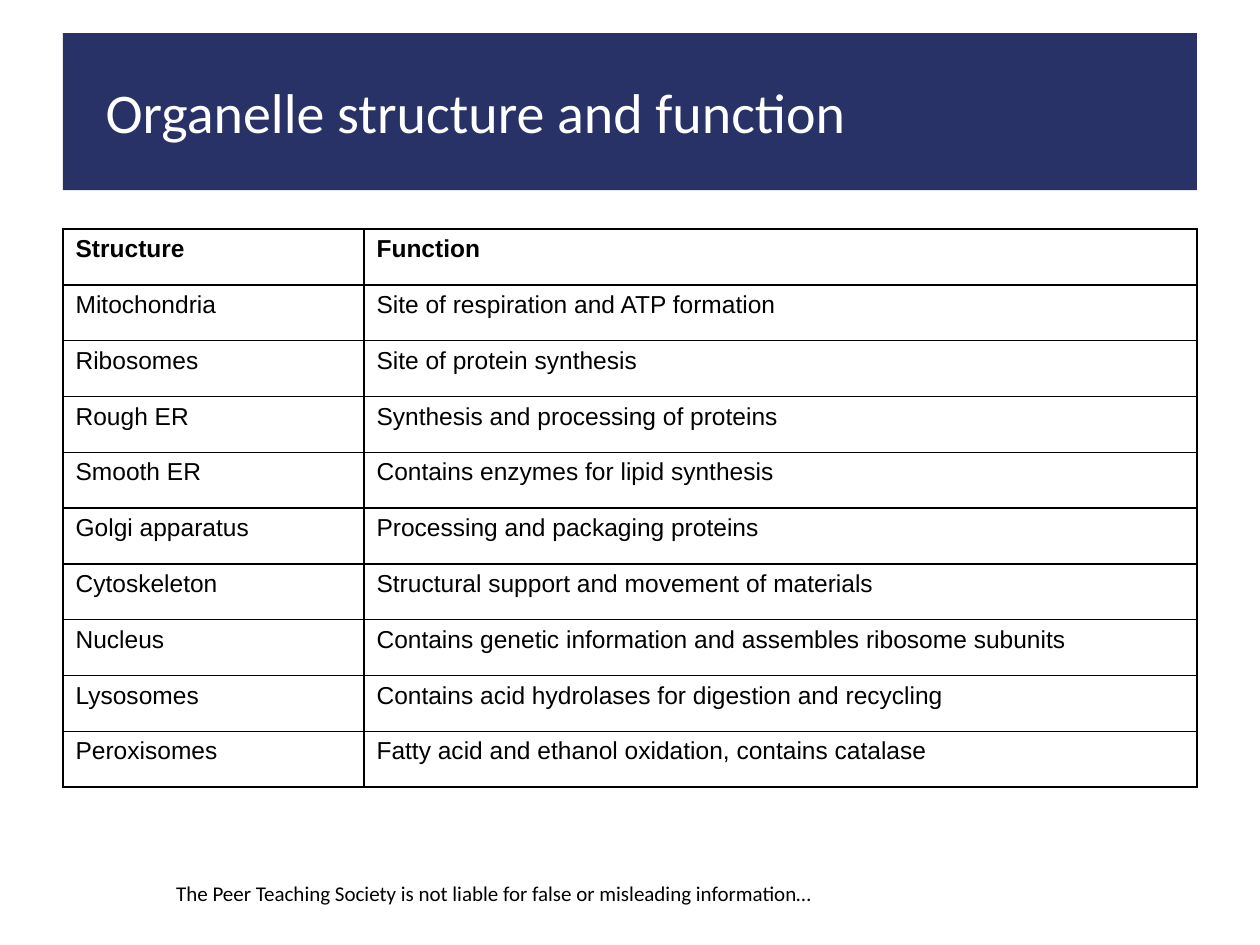
import dataclasses

import pptx
import pptx.dml.color
import pptx.enum.shapes
import pptx.oxml
import pptx.oxml.ns
import pptx.util

Pt = pptx.util.Pt
RGB = pptx.dml.color.RGBColor


@dataclasses.dataclass(frozen=True)
class Theme:
    navy: str = "293267"
    white: str = "FFFFFF"
    black: str = "000000"
    heading_font: str = "Calibri"
    table_font: str = "Arial"
    title_size: int = 32
    table_size: int = 14
    footer_size: int = 12
    border_width: int = 1


theme = Theme()


def write(frame, text, *, size, font, color=theme.black, bold=False):
    frame.word_wrap = True
    run = frame.paragraphs[0].add_run()
    run.text = text
    run.font.size = Pt(size)
    run.font.name = font
    run.font.bold = bold
    run.font.color.rgb = RGB.from_string(color)


def add_borders(cell):
    properties = cell._tc.get_or_add_tcPr()
    for side in ("lnL", "lnR", "lnT", "lnB"):
        properties.append(pptx.oxml.parse_xml(
            f'<a:{side} {pptx.oxml.ns.nsdecls("a")} w="{Pt(theme.border_width)}">'
            f'<a:solidFill><a:srgbClr val="{theme.black}"/></a:solidFill></a:{side}>'
        ))


deck = pptx.Presentation()
deck.slide_width, deck.slide_height = Pt(720), Pt(540)
slide = deck.slides.add_slide(deck.slide_layouts[6])

# Footer
disclaimer = slide.shapes.add_textbox(Pt(93.6), Pt(499.7), Pt(398.9), Pt(21.6))
write(disclaimer.text_frame,
      "The Peer Teaching Society is not liable for false or misleading information…",
      size=theme.footer_size, font=theme.heading_font)

# Title banner
banner = slide.shapes.add_shape(
    pptx.enum.shapes.MSO_SHAPE.RECTANGLE, Pt(36), Pt(18.9), Pt(648), Pt(89.8))
banner.shadow.inherit = False
banner.fill.solid()
banner.fill.fore_color.rgb = RGB.from_string(theme.navy)
banner.line.fill.background()

title = slide.shapes.add_textbox(Pt(53.3), Pt(41), Pt(534), Pt(46))
write(title.text_frame, "Organelle structure and function",
      size=theme.title_size, font=theme.heading_font, color=theme.white)

# Organelle table
organelles = [
    ("Structure", "Function"),
    ("Mitochondria", "Site of respiration and ATP formation"),
    ("Ribosomes", "Site of protein synthesis"),
    ("Rough ER", "Synthesis and processing of proteins"),
    ("Smooth ER", "Contains enzymes for lipid synthesis"),
    ("Golgi apparatus", "Processing and packaging proteins"),
    ("Cytoskeleton", "Structural support and movement of materials"),
    ("Nucleus", "Contains genetic information and assembles ribosome subunits"),
    ("Lysosomes", "Contains acid hydrolases for digestion and recycling"),
    ("Peroxisomes", "Fatty acid and ethanol oxidation, contains catalase"),
]
row_height = 31.9
table = slide.shapes.add_table(
    len(organelles), 2, Pt(36), Pt(130.9), Pt(648), Pt(row_height * len(organelles))).table
table.horz_banding = False
table.columns[0].width = Pt(172)
table.columns[1].width = Pt(476)

for row_index, entry in enumerate(organelles):
    table.rows[row_index].height = Pt(row_height)
    for column_index, text in enumerate(entry):
        cell = table.cell(row_index, column_index)
        add_borders(cell)
        cell.fill.background()
        write(cell.text_frame, text, size=theme.table_size,
              font=theme.table_font, bold=row_index == 0)

deck.save("out.pptx")
